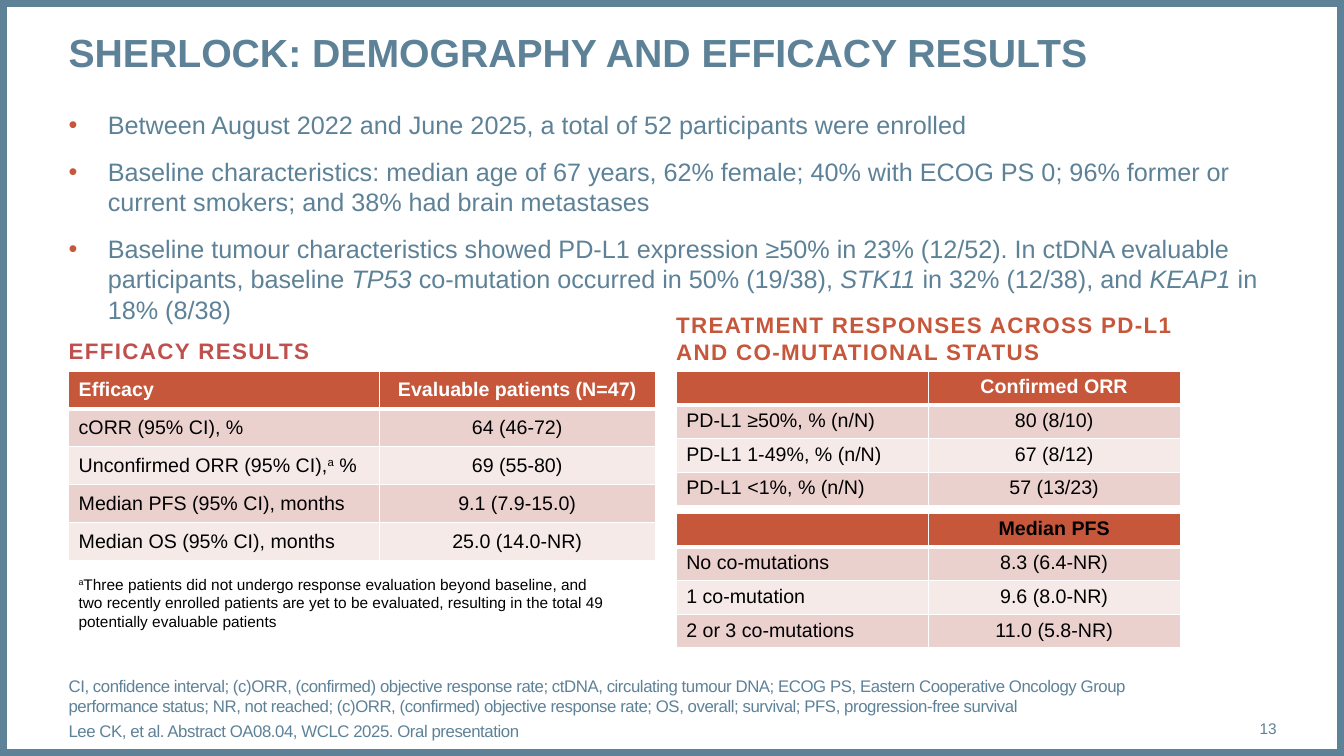
"""Build the SHERLOCK demography and efficacy results slide."""
from dataclasses import dataclass

from lxml.etree import SubElement
from pptx import Presentation
from pptx.dml.color import RGBColor
from pptx.enum.shapes import MSO_SHAPE as Shape
from pptx.enum.text import MSO_ANCHOR as Anchor, MSO_AUTO_SIZE as AutoSize, PP_ALIGN as Align
from pptx.oxml.ns import qn
from pptx.util import Pt


@dataclass(frozen=True)
class Theme:
    font: str = "Arial"
    slate: str = "5D8298"
    rust: str = "C6573B"
    red: str = "C0504D"
    black: str = "000000"
    white: str = "FFFFFF"
    bands: tuple = ("EAD1CE", "F5EAE8")
    title: int = 28
    body: int = 18
    heading: int = 16
    table: int = 14
    reference: int = 12
    small: int = 11


class ResultsSlide:
    def __init__(self, presentation, theme):
        self.theme = theme
        self.slide = presentation.slides.add_slide(presentation.slide_layouts[3])

    def fill_paragraph(self, paragraph, text, size, color, bold=False, align=Align.LEFT,
                       before=0, spacing=0, mark="i", value="1"):
        """Fill a paragraph; stretches between underscores get the marked attribute."""
        paragraph.alignment = align
        paragraph.space_before = Pt(before)
        if not text:
            SubElement(paragraph._p, qn("a:endParaRPr"), sz=str(size * 100))
        for index, piece in enumerate(text.split("_")):
            if not piece:
                continue
            run = paragraph.add_run()
            run.text = piece
            run.font.name = self.theme.font
            run.font.size = Pt(size)
            run.font.bold = bold
            run.font.color.rgb = RGBColor.from_string(color)
            properties = run._r.get_or_add_rPr()
            if spacing:
                properties.set("spc", str(round(spacing * 100)))
            if index % 2:
                properties.set(mark, value)

    def bullet(self, paragraph, character):
        properties = paragraph._p.get_or_add_pPr()
        if character:
            properties.set("marL", str(Pt(28)))
            properties.set("indent", str(-Pt(28)))
            color = SubElement(properties, qn("a:buClr"))
            SubElement(color, qn("a:srgbClr"), val=self.theme.rust)
            SubElement(properties, qn("a:buFont"), typeface=self.theme.font)
            SubElement(properties, qn("a:buChar"), char=character)
        else:
            properties.set("marL", "0")
            properties.set("indent", "0")
            SubElement(properties, qn("a:buNone"))

    def prepare(self, shape, box, anchor=Anchor.TOP, margins=(0, 0)):
        shape.left, shape.top, shape.width, shape.height = map(Pt, box)
        frame = shape.text_frame
        frame.word_wrap = True
        frame.auto_size = AutoSize.NONE
        frame.vertical_anchor = anchor
        frame.margin_left = frame.margin_right = Pt(margins[0])
        frame.margin_top = frame.margin_bottom = Pt(margins[1])
        return frame

    def frame(self, width, height):
        shape = self.slide.shapes.add_shape(Shape.RECTANGLE, 0, 0, width, height)
        shape.shadow.inherit = False
        shape.fill.background()
        shape.line.color.rgb = RGBColor.from_string(self.theme.slate)
        shape.line.width = Pt(10)

    def title(self, text, box):
        frame = self.prepare(self.slide.shapes.title, box)
        self.fill_paragraph(frame.paragraphs[0], text, self.theme.title,
                            self.theme.slate, bold=True)

    def listing(self, position, texts, box, size, gap, character="", spacing=0, anchor=Anchor.TOP):
        frame = self.prepare(self.slide.placeholders[position], box, anchor)
        for index, text in enumerate(texts):
            paragraph = frame.add_paragraph() if index else frame.paragraphs[0]
            self.bullet(paragraph, character)
            self.fill_paragraph(paragraph, text, size, self.theme.slate,
                                before=gap if index else 0, spacing=spacing)

    def label(self, text, box, size, color, anchor=Anchor.TOP, margins=(0, 0), **style):
        shape = self.slide.shapes.add_textbox(*map(Pt, box))
        frame = self.prepare(shape, box, anchor, margins)
        self.fill_paragraph(frame.paragraphs[0], text, size, color, **style)

    def heading(self, text, box, color):
        self.label(text, box, self.theme.heading, color, bold=True, spacing=1)

    def borders(self, cell, row):
        widths = {"L": 1, "R": 1, "T": 3 if row == 1 else 1, "B": 1 if row else 3}
        properties = cell._tc.get_or_add_tcPr()
        for side, width in widths.items():
            line = SubElement(properties, qn(f"a:ln{side}"), w=str(Pt(width)))
            fill = SubElement(line, qn("a:solidFill"))
            SubElement(fill, qn("a:srgbClr"), val=self.theme.white)

    def table(self, rows, left, top, columns, height, margin, header_color):
        theme = self.theme
        table = self.slide.shapes.add_table(
            len(rows), len(columns), Pt(left), Pt(top),
            Pt(sum(columns)), Pt(height * len(rows))).table
        table.horz_banding = False
        for column, width in zip(table.columns, columns):
            column.width = Pt(width)
        for row, texts in enumerate(rows):
            table.rows[row].height = Pt(height)
            for column, text in enumerate(texts):
                cell = table.cell(row, column)
                cell.margin_top = cell.margin_bottom = Pt(margin)
                self.borders(cell, row)
                cell.fill.solid()
                fill = theme.bands[(row - 1) % 2] if row else theme.rust
                cell.fill.fore_color.rgb = RGBColor.from_string(fill)
                self.fill_paragraph(cell.text_frame.paragraphs[0], text, theme.table,
                                    theme.black if row else header_color, bold=row == 0,
                                    align=Align.CENTER if column else Align.LEFT,
                                    mark="baseline", value="30000")


BULLETS = [
    "Between August 2022 and June 2025, a total of 52 participants were enrolled",
    "Baseline characteristics: median age of 67 years, 62% female; 40% with ECOG PS 0; "
    "96% former or current smokers; and 38% had brain metastases",
    "Baseline tumour characteristics showed PD-L1 expression ≥50% in 23% (12/52). "
    "In ctDNA evaluable participants, baseline _TP53_ co-mutation occurred in 50% (19/38), "
    "_STK11_ in 32% (12/38), and _KEAP1_ in 18% (8/38)",
]
REFERENCES = [
    "CI, confidence interval; (c)ORR, (confirmed) objective response rate; ctDNA, circulating "
    "tumour DNA; ECOG PS, Eastern Cooperative Oncology Group performance status; NR, not "
    "reached; (c)ORR, (confirmed) objective response rate; OS, overall; survival; PFS, "
    "progression-free survival",
    "Lee CK, et al. Abstract OA08.04, WCLC 2025. Oral presentation",
]
EFFICACY = [
    ("Efficacy", "Evaluable patients (N=47)"),
    ("cORR (95% CI), %", "64 (46-72)"),
    ("Unconfirmed ORR (95% CI),_a_ %", "69 (55-80)"),
    ("Median PFS (95% CI), months", "9.1 (7.9-15.0)"),
    ("Median OS (95% CI), months", "25.0 (14.0-NR)"),
]
RESPONSE = [
    ("", "Confirmed ORR"),
    ("PD-L1 ≥50%, % (n/N)", "80 (8/10)"),
    ("PD-L1 1-49%, % (n/N)", "67 (8/12)"),
    ("PD-L1 <1%, % (n/N)", "57 (13/23)"),
]
SURVIVAL = [
    ("", "Median PFS"),
    ("No co-mutations", "8.3 (6.4-NR)"),
    ("1 co-mutation", "9.6 (8.0-NR)"),
    ("2 or 3 co-mutations", "11.0 (5.8-NR)"),
]
FOOTNOTE = ("_a_Three patients did not undergo response evaluation beyond baseline, and two "
            "recently enrolled patients are yet to be evaluated, resulting in the total 49 "
            "potentially evaluable patients")


def main():
    theme = Theme()
    presentation = Presentation()
    presentation.slide_width, presentation.slide_height = Pt(960), Pt(540)
    results = ResultsSlide(presentation, theme)
    left, right = 49, 483
    results.frame(presentation.slide_width, presentation.slide_height)
    results.title("SHERLOCK: DEMOGRAPHY AND EFFICACY RESULTS", (left, 20, 863, 68))
    results.listing(1, BULLETS, (left, 78, 863, 167), theme.body, 12, character="•")
    results.listing(2, REFERENCES, (left, 500, 801, 29), theme.reference, 3,
                    spacing=-0.3, anchor=Anchor.BOTTOM)
    results.label("13", (850, 506, 62, 29), theme.small, theme.slate,
                  anchor=Anchor.MIDDLE, align=Align.RIGHT)
    results.heading("EFFICACY RESULTS", (left, 241, 300, 20), theme.red)
    results.heading("TREATMENT RESPONSES ACROSS PD-L1 AND CO-MUTATIONAL STATUS",
                    (right, 222, 385, 39), theme.rust)
    results.table(EFFICACY, left, 265, (222, 197), 27.1, 5.4, theme.white)
    results.table(RESPONSE, right, 265, (180, 180), 24, 3.6, theme.white)
    results.table(SURVIVAL, right, 366.5, (180, 180), 24, 3.6, theme.black)
    results.label(FOOTNOTE, (left, 407, 397, 48), theme.small, theme.black,
                  margins=(7.2, 3.6), mark="baseline", value="30000")
    presentation.save("out.pptx")


if __name__ == "__main__":
    main()
